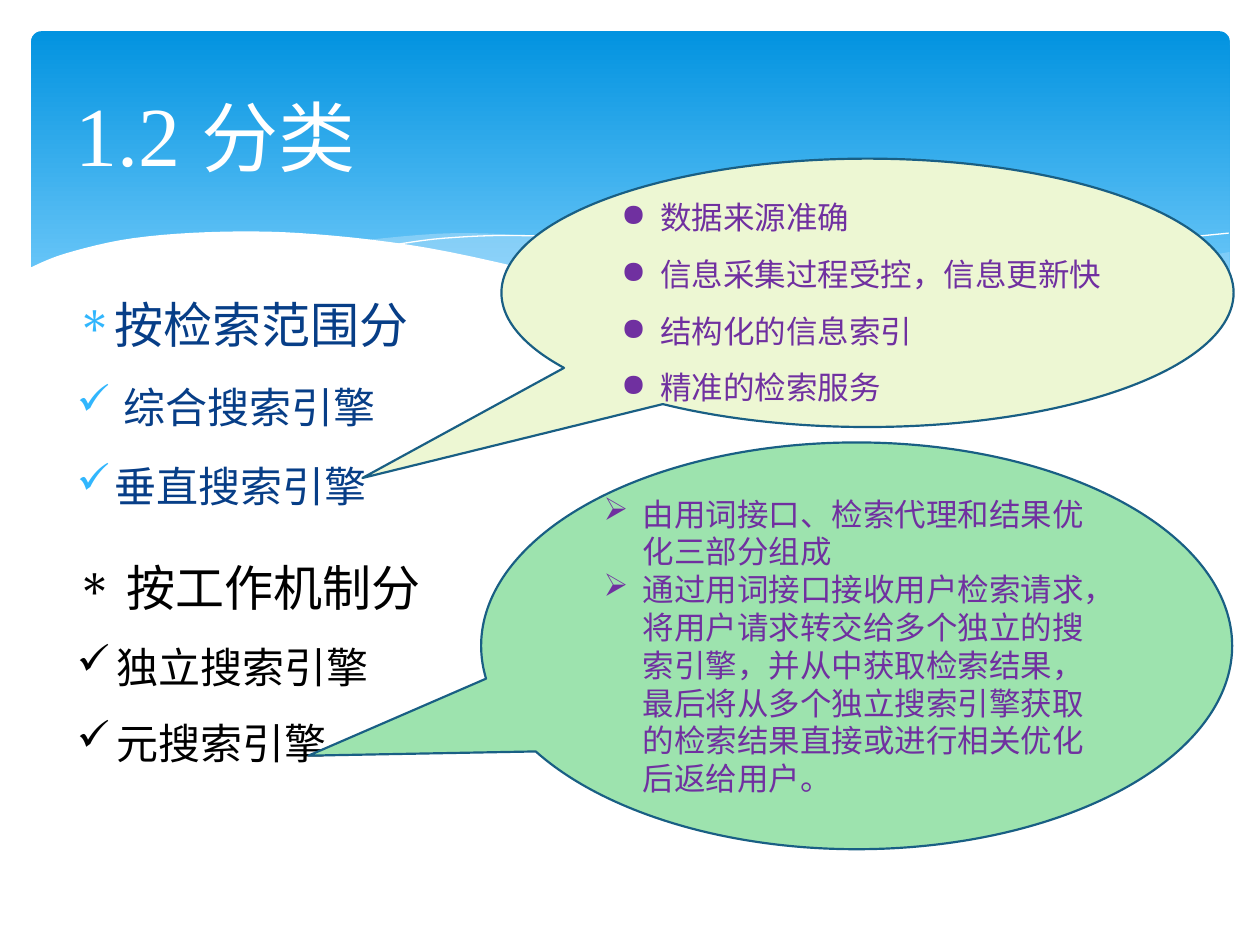
from dataclasses import dataclass
from typing import Optional

from lxml.etree import SubElement
from pptx import Presentation
from pptx.dml.color import RGBColor
from pptx.enum.shapes import MSO_SHAPE as SHAPE
from pptx.enum.text import MSO_ANCHOR as ANCHOR, PP_ALIGN as ALIGN
from pptx.oxml.ns import qn
from pptx.util import Cm, Pt

COLORS = {
    "band_top": "0293E0", "band_bottom": "83D3FE", "mist": "C6E7FC", "white": "FFFFFF",
    "navy": "073E87", "sky": "31B6FD", "black": "000000", "purple": "7030A0",
    "lime": "EDF7D3", "mint": "9DE3AE", "outline": "195F84",
}
FONT = "Cabin"
Points = list[tuple[float, float]]


@dataclass
class Item:
    text: str
    bullet: str
    size: int


@dataclass
class ItemList:
    items: list[Item]
    color: str
    indent: float
    line_spacing: float = 1.0
    space_before: float = 0  # share of the font size
    bullet_color: Optional[str] = None


@dataclass
class Callout:
    box: tuple[float, float, float, float]
    tail: tuple[float, float]
    fill: str
    content: ItemList


@dataclass
class Wave:
    edges: list[Points]  # each edge is a smooth curve; edges join with straight lines
    fill: Optional[str] = None
    opacity: int = 100


def rgb(name: str) -> RGBColor:
    return RGBColor.from_string(COLORS[name])


def smooth(knots: Points, steps: int = 6) -> Points:
    """Catmull-Rom curve through the knots."""
    padded = [knots[0], *knots, knots[-1]]
    curve = [knots[0]]
    for a, b, c, d in zip(padded, padded[1:], padded[2:], padded[3:]):
        for i in range(1, steps + 1):
            t = i / steps
            curve.append(tuple(
                0.5 * (2 * q + (r - p) * t + (2 * p - 5 * q + 4 * r - s) * t ** 2
                       + (3 * q - p - 3 * r + s) * t ** 3)
                for p, q, r, s in zip(a, b, c, d)))
    return curve


def draw_wave(shapes, wave: Wave) -> None:
    points = [(Cm(x), Cm(y)) for edge in wave.edges for x, y in smooth(edge)]
    builder = shapes.build_freeform(*points[0])
    builder.add_line_segments(points[1:], close=wave.fill is not None)
    sp = builder.convert_to_shape()
    sp.shadow.inherit = False
    if wave.fill is None:
        sp.fill.background()
        sp.line.color.rgb = rgb("white")
        sp.line.width = Pt(0)
        return
    sp.fill.solid()
    sp.fill.fore_color.rgb = rgb(wave.fill)
    sp.line.fill.background()
    if wave.opacity < 100:
        color = sp.fill._xPr.find(qn("a:solidFill"))[0]
        SubElement(color, qn("a:alpha"), val=str(wave.opacity * 1000))


def style_run(r, size: int, color: str, font: str = FONT) -> None:
    r.font.size, r.font.name = Pt(size), font
    r.font.color.rgb = rgb(color)


def write_items(tf, content: ItemList) -> None:
    tf.word_wrap = True
    tf.text = "\n".join(item.text for item in content.items)
    for p, item in zip(tf.paragraphs, content.items):
        p.alignment = ALIGN.LEFT
        p.line_spacing = content.line_spacing
        p.space_before = Pt(item.size * content.space_before)
        style_run(p.runs[0], item.size, content.color)
        pPr = p._p.get_or_add_pPr()
        pPr.set("marL", str(Cm(content.indent)))
        pPr.set("indent", str(-Cm(content.indent)))
        if content.bullet_color:
            holder = SubElement(pPr, qn("a:buClr"))
            SubElement(holder, qn("a:srgbClr"), val=COLORS[content.bullet_color])
        SubElement(pPr, qn("a:buChar"), char=item.bullet)


def draw_list(shapes, box: tuple[float, float, float, float], content: ItemList) -> None:
    write_items(shapes.add_textbox(*map(Cm, box)).text_frame, content)


def draw_callout(shapes, callout: Callout) -> None:
    sp = shapes.add_shape(SHAPE.OVAL_CALLOUT, *map(Cm, callout.box))
    sp.adjustments[0], sp.adjustments[1] = callout.tail
    sp.shadow.inherit = False
    sp.fill.solid()
    sp.fill.fore_color.rgb = rgb(callout.fill)
    sp.line.color.rgb = rgb("outline")
    sp.line.width = Pt(1.25)
    sp.text_frame.vertical_anchor = ANCHOR.MIDDLE
    write_items(sp.text_frame, callout.content)


WAVES = [
    Wave([[(24.79, 5.08), (23.39, 5.33), (21.87, 5.66), (19.13, 6.3), (16.79, 6.73)],
          [(16.79, 6.73), (18.59, 6.96), (20.4, 7.06), (22.15, 6.96), (23.57, 6.68),
           (24.79, 6.27)]], "mist", 29),
    Wave([[(7.26, 4.85), (9.17, 4.7), (11.23, 4.8), (13.41, 5.08), (15.98, 5.64),
           (18.82, 6.27), (22.68, 6.93)],
          [(22.68, 6.93), (21.03, 7.06), (19, 7.01), (16.51, 6.71), (14.38, 6.3),
           (11.4, 5.64), (9.19, 5.16), (7.26, 4.85)]], "mist", 40),
    Wave([[(7.85, 4.95), (8.97, 4.8), (10.57, 4.75), (12.95, 4.88), (15.44, 5.18),
           (18.47, 5.74), (21.11, 6.38), (23.04, 6.91)]]),
    Wave([[(15.57, 6.53), (18.29, 5.82), (21.23, 5.18), (23.11, 4.88), (24.77, 4.7)]]),
    Wave([[(0.58, 5.41), (1.32, 5.11), (2.69, 4.8), (4.5, 4.67), (6.35, 4.72), (8.64, 5),
           (11.35, 5.59), (14.1, 6.22), (16.46, 6.65), (18.9, 6.96), (20.9, 7.04),
           (22.83, 6.83), (24.82, 6.25)],
          [(24.82, 8.36), (0.58, 8.36)]], "white"),
]
BY_SCOPE = ItemList([Item("按检索范围分", "∗", 28), Item(" 综合搜索引擎", "✓", 24),
                     Item("垂直搜索引擎", "✓", 24)], "navy", 0.76, 1.4, 0.2, "sky")
BY_MECHANISM = ItemList([Item(" 按工作机制分", "∗", 28), Item("独立搜索引擎", "✓", 24),
                         Item("元搜索引擎", "✓", 24)], "black", 0.79, 1.5)
VERTICAL_NOTES = ["数据来源准确", "信息采集过程受控，信息更新快", "结构化的信息索引", "精准的检索服务"]
META_NOTES = [
    "由用词接口、检索代理和结果优化三部分组成",
    "通过用词接口接收用户检索请求，将用户请求转交给多个独立的搜索引擎，并从中获取检索结果，"
    "最后将从多个独立搜索引擎获取的检索结果直接或进行相关优化后返给用户。",
]
VERTICAL = Callout((10.11, 3.2, 14.76, 5.41), (-0.69, 0.69), "lime", ItemList(
    [Item(note, "●", 18) for note in VERTICAL_NOTES], "purple", 0.79, 1.5))
META = Callout((9.7, 8.92, 15.14, 8.2), (-0.73, 0.27), "mint", ItemList(
    [Item(note, "➢", 18) for note in META_NOTES], "purple", 0.79))


def main() -> None:
    prs = Presentation()
    prs.slide_width, prs.slide_height = Cm(25.4), Cm(19.05)
    shapes = prs.slides.add_slide(prs.slide_layouts[6]).shapes

    # Gradient band with waves
    band = shapes.add_shape(SHAPE.ROUNDED_RECTANGLE, Cm(0.63), Cm(0.63), Cm(24.16), Cm(6.86))
    band.adjustments[0] = 0.03
    band.shadow.inherit = False
    band.line.fill.background()
    band.fill.gradient()
    band.fill.gradient_angle = 270
    for stop, color, position in zip(band.fill.gradient_stops,
                                     ("band_top", "band_bottom"), (0, 0.9)):
        stop.color.rgb, stop.position = rgb(color), position
    for wave in WAVES:
        draw_wave(shapes, wave)

    # Title
    tf = shapes.add_textbox(Cm(1.27), Cm(0.94), Cm(22.86), Cm(3.48)).text_frame
    tf.word_wrap, tf.vertical_anchor = True, ANCHOR.MIDDLE
    p = tf.paragraphs[0]
    for text, size, font in (("1.2 ", 48, "Times New Roman"), ("分类", 44, FONT)):
        r = p.add_run()
        r.text = text
        style_run(r, size, "white", font)

    # Classifications and their callouts
    draw_list(shapes, (1.3, 5.33, 13, 5.21), BY_SCOPE)
    draw_callout(shapes, VERTICAL)
    draw_list(shapes, (1.3, 10.52, 13.21, 4.98), BY_MECHANISM)
    draw_callout(shapes, META)

    prs.save("out.pptx")


if __name__ == "__main__":
    main()
